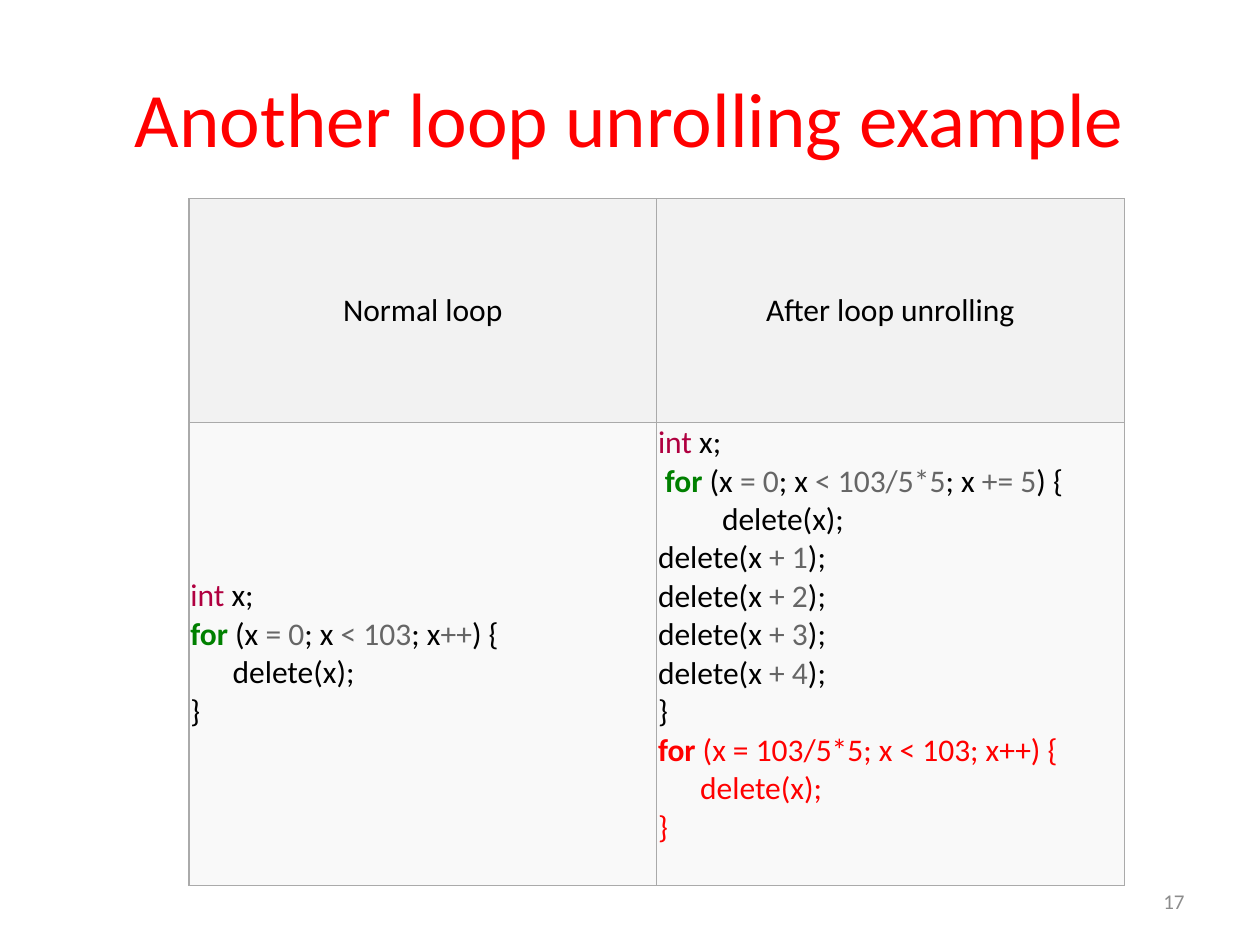
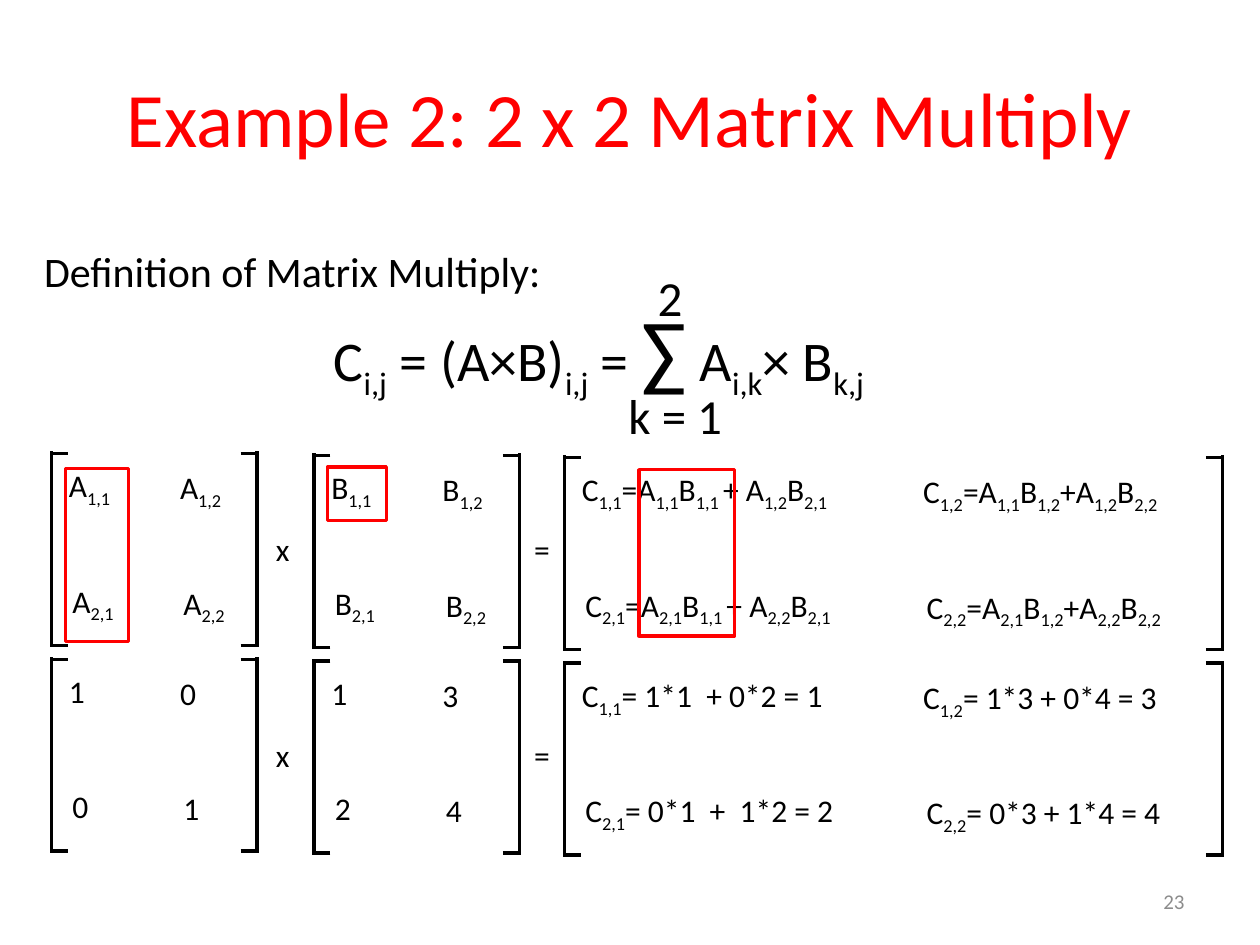
from lxml import etree
from pptx import Presentation
from pptx.dml.color import RGBColor
from pptx.enum.shapes import MSO_CONNECTOR, MSO_SHAPE
from pptx.enum.text import MSO_ANCHOR, PP_ALIGN
from pptx.oxml.ns import qn
from pptx.util import Cm, Pt

COLORS = {
    "title": "FF0000", "mark": "FF0000", "ink": "000000", "page": "8C8C8C",
    "head": "F2F2F2", "body": "F9F9F9", "rule": "AAAAAA",
    "int": "B00040", "for": "008000", "math": "666666",
}
FONT = "Calibri"

NORMAL = [
    (0, "int", " x;", "ink"),
    (0, "for", " (x ~= 0~; x ~< 103~; x~++~) {", "ink"),
    (0.85, "", "delete(x);", "ink"),
    (0, "", "}", "ink"),
]
UNROLLED = [
    (0, "int", " x;", "ink"),
    (0.14, "for", " (x ~= 0~; x ~< 103/5*5~; x ~+= 5~) {", "ink"),
    (1.29, "", "delete(x);", "ink"),
    *[(0, "", f"delete(x ~+ {step}~);", "ink") for step in range(1, 5)],
    (0, "", "}", "ink"),
    (0, "for", " (x = 103/5*5; x < 103; x++) {", "mark"),
    (0.85, "", "delete(x);", "mark"),
    (0, "", "}", "mark"),
]

SYMBOLS = [
    ["A_1,1_", "A_1,2_", "A_2,1_", "A_2,2_"],
    ["B_1,1_", "B_1,2_", "B_2,1_", "B_2,2_"],
    ["C_1,1_=A_1,1_B_1,1 _+ A_1,2_B_2,1_", "C_1,2_=A_1,1_B_1,2_+A_1,2_B_2,2_",
     "C_2,1_=A_2,1_B_1,1 _+ A_2,2_B_2,1_", "C_2,2_=A_2,1_B_1,2_+A_2,2_B_2,2_"],
]
NUMBERS = [
    ["1", "0", "0", "1"],
    ["1", "3", "2", "4"],
    ["C_1,1_= 1*1  + 0*2 = 1", "C_1,2_= 1*3 + 0*4 = 3",
     "C_2,1_= 0*1  +  1*2 = 2", "C_2,2_= 0*3 + 1*4 = 4"],
]
FRAMES = [(1.04, 4.14, 2.24), (6.33, 4.14, 2.24), (11.38, 13.26, 6.88)]
MARKS = [(1.32, 9.45, 1.27, 3.48), (6.6, 9.42, 1.19, 1.07), (12.88, 9.47, 1.93, 3.35)]


def rgb(name):
    """Return the named colour."""
    return RGBColor.from_string(COLORS[name])


def add_run(para, text, size, color="ink", bold=False):
    """Append one styled run to a paragraph."""
    run = para.add_run()
    run.text = text
    font = run.font
    font.name, font.size, font.bold = FONT, Pt(size), bold
    font.color.rgb = rgb(color)
    return run


def add_text(slide, box, text, size, color="ink", align=PP_ALIGN.LEFT, anchor=MSO_ANCHOR.TOP):
    """Add a text box in which underscores enclose subscripts."""
    frame = slide.shapes.add_textbox(*map(Cm, box)).text_frame
    frame.word_wrap = True
    frame.vertical_anchor = anchor
    para = frame.paragraphs[0]
    para.alignment = align
    for index, part in enumerate(text.split("_")):
        if part:
            run = add_run(para, part, 48 if part == "∑" else size, color)
            if index % 2:
                run.font._element.set("baseline", "-25000")
    return para


def add_base(deck, title, page):
    """Add a slide with its title and page number."""
    slide = deck.slides.add_slide(deck.slide_layouts[6])
    add_text(slide, (1.27, 0.76, 22.86, 3.18), title, 44, "title",
             PP_ALIGN.CENTER, MSO_ANCHOR.MIDDLE)
    add_text(slide, (18.2, 17.66, 5.93, 1.01), str(page), 12, "page",
             PP_ALIGN.RIGHT, MSO_ANCHOR.MIDDLE)
    return slide


def style_cell(cell, fill):
    """Set the fill, margins and borders of a table cell."""
    cell.fill.solid()
    cell.fill.fore_color.rgb = rgb(fill)
    cell.vertical_anchor = MSO_ANCHOR.MIDDLE
    cell.margin_left = cell.margin_right = cell.margin_top = cell.margin_bottom = Cm(0.03)
    props = cell._tc.get_or_add_tcPr()
    for index, side in enumerate(("lnL", "lnR", "lnT", "lnB")):
        line = etree.Element(qn(f"a:{side}"), w=str(Pt(0.75)))
        paint = etree.SubElement(line, qn("a:solidFill"))
        etree.SubElement(paint, qn("a:srgbClr"), val=COLORS["rule"])
        props.insert(index, line)


def write_code(cell, lines):
    """Write code lines with coloured keywords and tilde-marked maths."""
    frame = cell.text_frame
    for index, (indent, key, rest, color) in enumerate(lines):
        para = frame.add_paragraph() if index else frame.paragraphs[0]
        para._p.get_or_add_pPr().set("marL", str(Cm(indent)))
        if key:
            add_run(para, key, 18, key if color == "ink" else color, key == "for")
        for turn, part in enumerate(rest.split("~")):
            if part:
                add_run(para, part, 18, "math" if turn % 2 else color)


def add_code(slide, box):
    """Add the table that compares the two loops."""
    table = slide.shapes.add_table(2, 2, *map(Cm, box)).table
    table.first_row = table.horz_banding = False
    table.rows[0].height = Cm(4.5)
    table.rows[1].height = Cm(box[3] - 4.5)
    columns = [("Normal loop", NORMAL), ("After loop unrolling", UNROLLED)]
    for index, (name, lines) in enumerate(columns):
        head, body = table.cell(0, index), table.cell(1, index)
        style_cell(head, "head")
        style_cell(body, "body")
        para = head.text_frame.paragraphs[0]
        para.alignment = PP_ALIGN.CENTER
        add_run(para, name, 18)
        write_code(body, lines)
    table.cell(1, 1).margin_bottom = Cm(0.8)


def add_line(slide, *ends):
    """Add a plain black line."""
    line = slide.shapes.add_connector(MSO_CONNECTOR.STRAIGHT, *map(Cm, ends))
    line.line.color.rgb = rgb("ink")
    line.line.width = Pt(2)
    etree.SubElement(line._element.spPr, qn("a:effectLst"))


def add_matrix(slide, box, pitch, terms, widths):
    """Add a bracketed two by two matrix."""
    left, top, width, height = box
    for edge, inward in ((left, 1), (left + width, -1)):
        add_line(slide, edge, top, edge, top + height)
        for level in (top + 0.04, top + height - 0.04):
            add_line(slide, edge + 0.33 * inward, level, edge - 0.03 * inward, level)
    for index, term in enumerate(terms):
        row, col = divmod(index, 2)
        spot = (left + 0.1 + col * pitch + row * 0.07,
                top + 0.18 + col * 0.04 + row * 2.32, widths, 1.02)
        add_text(slide, spot, term, 18)


def add_product(slide, top, rows, width):
    """Add a row of matrices joined by their operators."""
    for index, ((left, span, pitch), terms) in enumerate(zip(FRAMES, rows)):
        box = (left, top + 0.04 * index, span, 3.95)
        add_matrix(slide, box, pitch, terms, 5.87 if index == 2 else width)
    for left, sign in ((5.31, "x"), (10.52, "=")):
        add_text(slide, (left, top + 1.47, 0.82, 1.02), sign, 18)


def add_sum(slide, left, top):
    """Add the summation formula with its limits."""
    para = add_text(slide, (left, top + 0.61, 11.63, 2.31), "C_i,j_ = (A×B)_i,j_ = ", 32)
    add_run(para, "∑", 48)
    for text, low in ((" A", "i,k"), ("× B", "k,j")):
        add_run(para, text, 32)
        add_run(para, low, 32).font._element.set("baseline", "-25000")
    add_text(slide, (left + 6.53, top, 1.32, 1.45), "2", 28)
    add_text(slide, (left + 5.94, top + 2.39, 3.58, 1.45), "k = 1", 28)


def add_mark(slide, box):
    """Add a red outline around matrix terms."""
    mark = slide.shapes.add_shape(MSO_SHAPE.RECTANGLE, *map(Cm, box))
    mark.shadow.inherit = False
    mark.fill.background()
    mark.line.color.rgb = rgb("mark")
    mark.line.width = Pt(2)


def main():
    """Build and save the deck."""
    deck = Presentation()
    deck.slide_width, deck.slide_height = Cm(25.4), Cm(19.05)

    slide = add_base(deck, "Another loop unrolling example", 17)
    add_code(slide, (3.81, 4.01, 18.85, 13.84))

    slide = add_base(deck, "Example 2: 2 x 2 Matrix Multiply", 23)
    add_sum(slide, 6.48, 5.26)
    add_text(slide, (0.64, 4.83, 10.62, 1.27), "Definition of Matrix Multiply:", 24)
    add_product(slide, 9.1, SYMBOLS, 1.42)
    for box in MARKS:
        add_mark(slide, box)
    add_product(slide, 13.25, NUMBERS, 0.84)

    deck.save("out.pptx")


if __name__ == "__main__":
    main()
